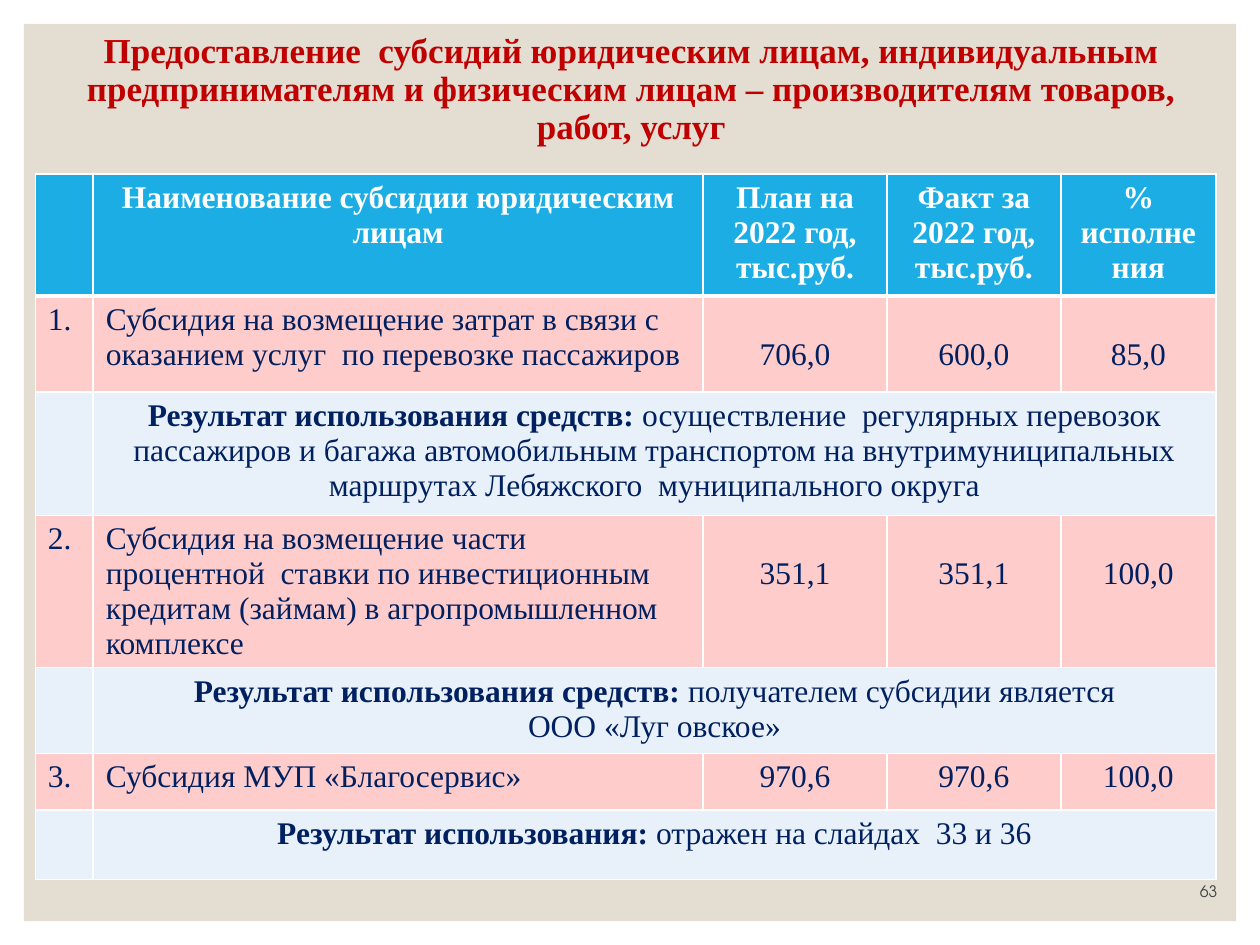
import pptx
import pptx.util
import pptx.dml.color
import pptx.enum.shapes
import pptx.enum.text
import pptx.oxml
import pptx.oxml.ns

Inches, Pt = pptx.util.Inches, pptx.util.Pt
RGBColor = pptx.dml.color.RGBColor
ALIGN = pptx.enum.text.PP_ALIGN
ANCHOR = pptx.enum.text.MSO_ANCHOR

WHITE = RGBColor(0xFF, 0xFF, 0xFF)
BEIGE = RGBColor(0xE3, 0xDE, 0xD1)
RED = RGBColor(0xC0, 0x00, 0x00)
NAVY = RGBColor(0x00, 0x20, 0x60)
GREY = RGBColor(0x40, 0x40, 0x40)
BLUE = RGBColor(0x1C, 0xAD, 0xE4)
PINK = RGBColor(0xFF, 0xCC, 0xCC)
PALE = RGBColor(0xE8, 0xF1, 0xFA)
SERIF, SANS = "Times New Roman", "TeX Gyre Adventor"

# Content
TITLE = ("Предоставление  субсидий юридическим лицам, индивидуальным "
         "предпринимателям и физическим лицам – производителям товаров, работ, услуг")
PAGE_NUMBER = "63"
HEADER = ["", "Наименование субсидии юридическим лицам", "План на 2022 год, тыс.руб.",
          "Факт за 2022 год, тыс.руб.", "% исполнения"]
# Each subsidy: name, figures, lines the figures are lowered by, result label, result paragraphs
SUBSIDIES = [
    ("Субсидия на возмещение затрат в связи с оказанием услуг  по перевозке пассажиров",
     ["706,0", "600,0", "85,0"], 1, "Результат использования средств: ",
     ["осуществление  регулярных перевозок пассажиров и багажа автомобильным транспортом "
      "на внутримуниципальных маршрутах Лебяжского  муниципального округа"]),
    ("Субсидия на возмещение части процентной  ставки по инвестиционным кредитам "
     "(займам) в агропромышленном комплексе",
     ["351,1", "351,1", "100,0"], 1, "Результат использования средств: ",
     ["получателем субсидии является", "ООО «Луг овское»"]),
    ("Субсидия МУП «Благосервис»",
     ["970,6", "970,6", "100,0"], 0, "Результат использования: ",
     ["отражен на слайдах  33 и 36"]),
]
COLUMN_WIDTHS = [0.46, 4.84, 1.46, 1.38, 1.23]
ROW_HEIGHTS = [0.97, 0.76, 0.98, 1.21, 0.68, 0.45, 0.55]
LINE_HEIGHT = Pt(20)


def add_span(para, text, size, color, bold=False, font=SERIF):
    span = para.add_run()
    span.text = text
    span.font.name, span.font.size, span.font.bold = font, Pt(size), bold
    span.font.color.rgb = color


def add_text_box(page, left, top, width, height, anchor, align):
    box = page.shapes.add_textbox(Inches(left), Inches(top), Inches(width), Inches(height))
    box.text_frame.word_wrap = True
    box.text_frame.vertical_anchor = anchor
    para = box.text_frame.paragraphs[0]
    para.alignment = align
    return para


def style_cell(cell, fill, bottom_width=1):
    properties = cell._tc.get_or_add_tcPr()
    for side, width in (("L", 1), ("R", 1), ("T", 1), ("B", bottom_width)):
        properties.append(pptx.oxml.parse_xml(
            f'<a:ln{side} {pptx.oxml.ns.nsdecls("a")} w="{Pt(width)}">'
            f'<a:solidFill><a:srgbClr val="{WHITE}"/></a:solidFill></a:ln{side}>'))
    cell.fill.solid()
    cell.fill.fore_color.rgb = fill
    cell.margin_bottom = 0


def write_cell(cell, paragraphs, align, color=NAVY):
    """Each paragraph is a list of (text, bold) pairs."""
    frame = cell.text_frame
    for index, spans in enumerate(paragraphs):
        para = frame.add_paragraph() if index else frame.paragraphs[0]
        para.alignment = align
        para.line_spacing = LINE_HEIGHT
        for text, bold in spans:
            if text:
                add_span(para, text, 18, color, bold)


def fill_table(table):
    for column, width in zip(table.columns, COLUMN_WIDTHS):
        column.width = Inches(width)
    for row, height in zip(table.rows, ROW_HEIGHTS):
        row.height = Inches(height)

    # Header row
    for column, text in enumerate(HEADER):
        style_cell(table.cell(0, column), BLUE, bottom_width=3)
        write_cell(table.cell(0, column), [[(text, True)]], ALIGN.CENTER, WHITE)

    for number, (name, figures, lowered, label, result) in enumerate(SUBSIDIES, 1):
        # Subsidy row
        row = 2 * number - 1
        for column, text in enumerate([f"{number}.", name, *figures]):
            cell = table.cell(row, column)
            style_cell(cell, PINK)
            is_figure = column > 1
            write_cell(cell, [[(text, False)]], ALIGN.CENTER if is_figure else ALIGN.LEFT)
            if is_figure:
                cell.margin_top = Inches(0.05) + lowered * LINE_HEIGHT

        # Result row, merged across the name and figure columns
        for column in range(len(HEADER)):
            style_cell(table.cell(row + 1, column), PALE)
        merged = table.cell(row + 1, 1)
        merged.merge(table.cell(row + 1, len(HEADER) - 1))
        paragraphs = [[(text, False)] for text in result]
        paragraphs[0].insert(0, (label, True))
        write_cell(merged, paragraphs, ALIGN.CENTER)


def main():
    deck = pptx.Presentation()
    deck.slide_width, deck.slide_height = Inches(10), Inches(7.5)
    page = deck.slides.add_slide(deck.slide_layouts[6])

    # Beige panel
    panel = page.shapes.add_shape(pptx.enum.shapes.MSO_SHAPE.RECTANGLE,
                                  Inches(0.19), Inches(0.19), Inches(9.62), Inches(7.12))
    panel.shadow.inherit = False
    panel.fill.solid()
    panel.fill.fore_color.rgb = BEIGE
    panel.line.fill.background()

    # Title
    title = add_text_box(page, 0.51, 0.36, 9, 0.71, ANCHOR.MIDDLE, ALIGN.CENTER)
    title.line_spacing = 0.9
    add_span(title, TITLE, 20, RED, bold=True)

    # Subsidy table
    frame = page.shapes.add_table(len(ROW_HEIGHTS), len(HEADER), Inches(0.28), Inches(1.38),
                                  Inches(sum(COLUMN_WIDTHS)), Inches(sum(ROW_HEIGHTS)))
    fill_table(frame.table)

    # Page number
    number = add_text_box(page, 8.56, 6.9, 1.2, 0.3, ANCHOR.BOTTOM, ALIGN.RIGHT)
    add_span(number, PAGE_NUMBER, 9, GREY, font=SANS)

    deck.save("out.pptx")


if __name__ == "__main__":
    main()
